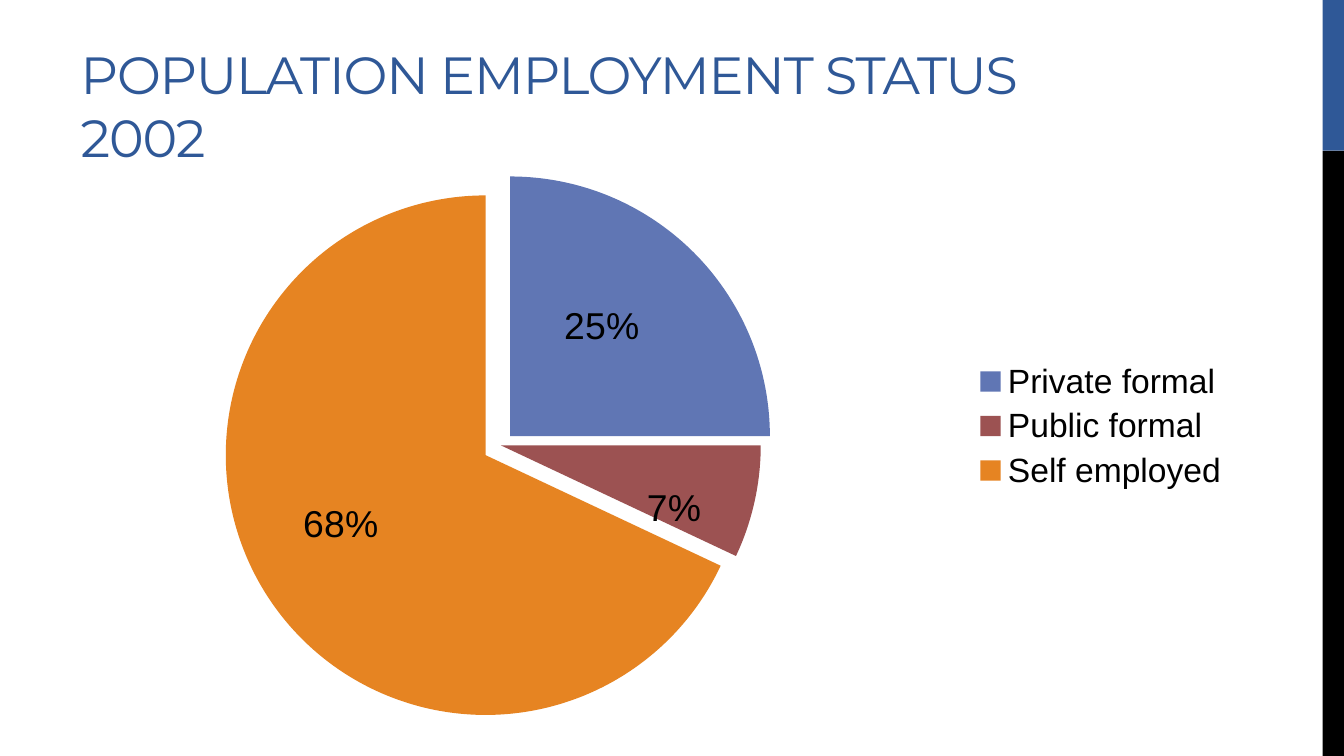
import pptx
import pptx.chart.data
import pptx.dml.color
import pptx.enum.chart
import pptx.enum.shapes
import pptx.enum.text
import pptx.oxml
import pptx.oxml.ns
import pptx.util

Pt = pptx.util.Pt

COLORS = {"blue": "2F5897", "black": "000000", "white": "FFFFFF",
          "private": "6076B4", "public": "9C5252", "self": "E68422"}
SLIDE_W, SLIDE_H = 720, 405
TITLE = "POPULATION EMPLOYMENT STATUS 2002"
TITLE_BOX = (36, 13, 559.5, 80.6)
CHART_BOX = (41.8, 72, 624.2, 312.5)
PLOT = {"x": 0.14, "y": 0.088, "w": 0.446, "h": 0.891}
BAR_W, BAR_SPLIT = 11.4, 80.8
# category, percent, color, explosion, label shift as a share of the chart
SECTORS = [
    ("Private formal", 25, "private", 5, (0, -0.03)),
    ("Public formal", 7, "public", 0, (0.04, 0.06)),
    ("Self employed", 68, "self", 7, (-0.03, 0)),
]


def rgb(name):
    return pptx.dml.color.RGBColor.from_string(COLORS[name])


def write_text(frame, text, *, font, size, color, anchor, spacing=0):
    """Fill a text frame with one run; spacing is in points between letters."""
    frame.word_wrap = True
    frame.auto_size = pptx.enum.text.MSO_AUTO_SIZE.NONE
    frame.vertical_anchor = anchor
    paragraph = frame.paragraphs[0]
    paragraph.alignment = pptx.enum.text.PP_ALIGN.LEFT
    run = paragraph.add_run()
    run.text = text
    run.font.name, run.font.size = font, Pt(size)
    run.font.color.rgb = rgb(color)
    run.font._element.set("spc", str(round(spacing * 100)))


def add_bar(slide, top, height, color):
    bar = slide.shapes.add_shape(
        pptx.enum.shapes.MSO_SHAPE.RECTANGLE,
        Pt(SLIDE_W - BAR_W), Pt(top), Pt(BAR_W), Pt(height))
    bar.shadow.inherit = False
    bar.fill.solid()
    bar.fill.fore_color.rgb = rgb(color)
    bar.line.fill.background()


def manual_layout(**settings):
    namespace = pptx.oxml.ns.nsdecls("c")
    parts = "".join(f'<c:{tag} val="{value}"/>' for tag, value in settings.items())
    return pptx.oxml.parse_xml(
        f"<c:layout {namespace}><c:manualLayout>{parts}</c:manualLayout></c:layout>")


def style_font(font, size):
    font.name, font.size = "Arial", Pt(size)
    font.color.rgb = rgb("black")


def add_employment_pie(slide):
    data = pptx.chart.data.CategoryChartData()
    data.categories = [sector[0] for sector in SECTORS]
    data.add_series("Series 1", [sector[1] for sector in SECTORS])
    chart = slide.shapes.add_chart(
        pptx.enum.chart.XL_CHART_TYPE.PIE, *map(Pt, CHART_BOX), data).chart
    chart.has_title = False
    style_font(chart.font, 10)
    chart.has_legend = True
    chart.legend.position = pptx.enum.chart.XL_LEGEND_POSITION.RIGHT
    chart.legend.include_in_layout = False
    style_font(chart.legend.font, 18)

    plot_area = chart._chartSpace.xpath("c:chart/c:plotArea")[0]
    for automatic in plot_area.xpath("c:layout"):
        plot_area.remove(automatic)
    plot_area.insert(0, manual_layout(
        layoutTarget="inner", xMode="edge", yMode="edge", **PLOT))

    pie = chart.plots[0]
    pie.vary_by_categories = True
    series = pie.series[0]
    labels = series.data_labels
    labels.show_value, labels.show_percentage = False, True
    labels.number_format, labels.number_format_is_linked = "0%", False
    style_font(labels.font, 20)
    for index, (_, _, color, explosion, (dx, dy)) in enumerate(SECTORS):
        point = series.points[index]
        point.format.fill.solid()
        point.format.fill.fore_color.rgb = rgb(color)
        point.format.line.fill.background()
        sector = series._element.xpath(f"c:dPt[c:idx/@val='{index}']")[0]
        sector.xpath("c:spPr")[0].addprevious(pptx.oxml.parse_xml(
            f'<c:explosion {pptx.oxml.ns.nsdecls("c")} val="{explosion}"/>'))

        style_font(point.data_label.font, 20)
        point.data_label.position = pptx.enum.chart.XL_LABEL_POSITION.CENTER
        label = series._element.xpath(f"c:dLbls/c:dLbl[c:idx/@val='{index}']")[0]
        label.xpath("c:showVal")[0].set("val", "0")
        label.xpath("c:showPercent")[0].set("val", "1")
        label.xpath("c:idx")[0].addnext(manual_layout(x=dx, y=dy))
    for leader_lines in series._element.xpath("c:dLbls/c:showLeaderLines"):
        leader_lines.set("val", "0")


def main():
    deck = pptx.Presentation()
    deck.slide_width, deck.slide_height = Pt(SLIDE_W), Pt(SLIDE_H)
    slide = deck.slides.add_slide(deck.slide_layouts.get_by_name("Title Only"))
    slide.background.fill.solid()
    slide.background.fill.fore_color.rgb = rgb("white")
    add_bar(slide, 0, BAR_SPLIT, "blue")
    add_bar(slide, BAR_SPLIT, SLIDE_H - BAR_SPLIT, "black")
    title = slide.shapes.title
    title.left, title.top, title.width, title.height = map(Pt, TITLE_BOX)
    write_text(title.text_frame, TITLE, font="Montserrat", size=28, color="blue",
               anchor=pptx.enum.text.MSO_ANCHOR.BOTTOM, spacing=-0.6)
    add_employment_pie(slide)
    deck.save("out.pptx")


if __name__ == "__main__":
    main()
